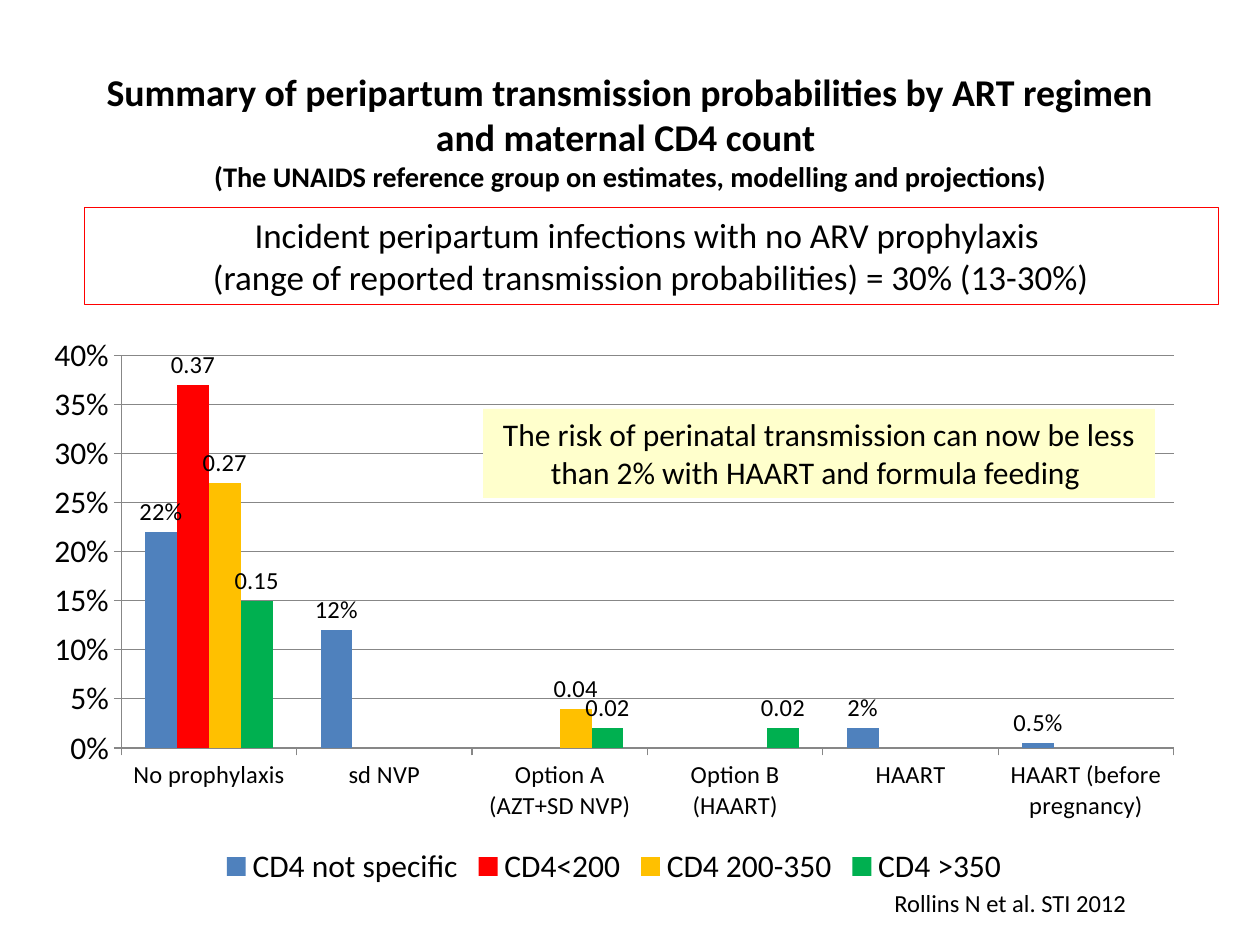
from pptx import Presentation
from pptx.chart.data import CategoryChartData
from pptx.dml.color import RGBColor
from pptx.enum.chart import XL_CHART_TYPE, XL_LABEL_POSITION, XL_LEGEND_POSITION, XL_TICK_MARK
from pptx.enum.shapes import MSO_SHAPE
from pptx.enum.text import MSO_ANCHOR, MSO_AUTO_SIZE, PP_ALIGN
from pptx.util import Pt

BLACK = RGBColor(0x00, 0x00, 0x00)
GREY = RGBColor(0x87, 0x87, 0x87)
BLUE = RGBColor(0x4F, 0x81, 0xBD)
RED = RGBColor(0xFF, 0x00, 0x00)
AMBER = RGBColor(0xFF, 0xC0, 0x00)
GREEN = RGBColor(0x00, 0xB0, 0x50)
CREAM = RGBColor(0xFF, 0xFF, 0xCC)

EMU_PER_PX = 914400 / 126

REGIMENS = ["No prophylaxis", "sd NVP", "Option A (AZT+SD NVP)",
            "Option B (HAART)", "HAART", "HAART (before pregnancy)"]
CD4_GROUPS = [
    ("CD4 not specific", BLUE, "0%", [0.22, 0.12, None, None, 0.02, 0.005]),
    ("CD4<200", RED, "General", [0.37, None, None, None, None, None]),
    ("CD4 200-350", AMBER, "General", [0.27, None, 0.04, None, None, None]),
    ("CD4 >350", GREEN, "General", [0.15, None, 0.02, 0.02, None, None]),
]


def px(*lengths):
    return [round(length * EMU_PER_PX) for length in lengths]


def apply(target, **values):
    for name, value in values.items():
        setattr(target, name, value)


class SlideBuilder:
    font_name = "Calibri"

    def __init__(self, deck):
        self.slide = deck.slides.add_slide(deck.slide_layouts[5])

    def style(self, font, size, bold=False):
        apply(font, name=self.font_name, size=Pt(size), bold=bold)
        font.color.rgb = BLACK

    def set_lines(self, frame, lines, size, align=PP_ALIGN.CENTER):
        for index, line in enumerate(lines):
            paragraph = frame.paragraphs[0] if index == 0 else frame.add_paragraph()
            paragraph.alignment = align
            run = paragraph.add_run()
            run.text = line
            self.style(run.font, size)

    def title(self, box, parts):
        heading = self.slide.shapes.title
        apply(heading, **dict(zip(("left", "top", "width", "height"), px(*box))))
        apply(heading.text_frame, word_wrap=True, auto_size=MSO_AUTO_SIZE.NONE,
              vertical_anchor=MSO_ANCHOR.MIDDLE)
        paragraph = heading.text_frame.paragraphs[0]
        paragraph.alignment = PP_ALIGN.CENTER
        for index, (words, size) in enumerate(parts):
            if index:
                paragraph.add_line_break()
            run = paragraph.add_run()
            run.text = words
            self.style(run.font, size, bold=True)

    def panel(self, box, lines, size, fill=None, line=None):
        panel = self.slide.shapes.add_shape(MSO_SHAPE.RECTANGLE, *px(*box))
        panel.shadow.inherit = False
        if fill is None:
            panel.fill.background()
        else:
            panel.fill.solid()
            panel.fill.fore_color.rgb = fill
        if line is None:
            panel.line.fill.background()
        else:
            panel.line.color.rgb = line
            panel.line.width = Pt(0.25)
        apply(panel.text_frame, word_wrap=True, vertical_anchor=MSO_ANCHOR.TOP,
              auto_size=MSO_AUTO_SIZE.SHAPE_TO_FIT_TEXT)
        self.set_lines(panel.text_frame, lines, size)

    def note(self, box, words, size):
        note = self.slide.shapes.add_textbox(*px(*box))
        apply(note.text_frame, word_wrap=False, auto_size=MSO_AUTO_SIZE.SHAPE_TO_FIT_TEXT)
        self.set_lines(note.text_frame, [words], size, PP_ALIGN.LEFT)

    def column_chart(self, box, categories, groups):
        figures = CategoryChartData()
        figures.categories = categories
        for name, _, number_format, values in groups:
            figures.add_series(name, values, number_format)
        chart = self.slide.shapes.add_chart(
            XL_CHART_TYPE.COLUMN_CLUSTERED, *px(*box), figures).chart
        self.style(chart.font, 18)
        apply(chart, has_title=False, has_legend=True)
        apply(chart.legend, position=XL_LEGEND_POSITION.BOTTOM, include_in_layout=False)
        apply(chart.value_axis, minimum_scale=0, maximum_scale=0.4, major_unit=0.05,
              has_major_gridlines=True)
        apply(chart.value_axis.tick_labels, number_format="0%",
              number_format_is_linked=False)
        self.style(chart.category_axis.tick_labels.font, 14)
        for axis in (chart.value_axis, chart.category_axis):
            axis.major_tick_mark = XL_TICK_MARK.OUTSIDE
            axis.format.line.color.rgb = GREY
        chart.value_axis.major_gridlines.format.line.color.rgb = GREY
        plot = chart.plots[0]
        apply(plot, gap_width=150, overlap=0, vary_by_categories=False)
        for series, (_, color, number_format, _) in zip(plot.series, groups):
            series.format.fill.solid()
            series.format.fill.fore_color.rgb = color
            apply(series.data_labels, show_value=True, number_format=number_format,
                  number_format_is_linked=False, position=XL_LABEL_POSITION.OUTSIDE_END)
            self.style(series.data_labels.font, 14)
        return plot

    def point_label(self, series, index, words):
        label = series.points[index].data_label
        self.set_lines(label.text_frame, [words], 14)
        label.position = XL_LABEL_POSITION.OUTSIDE_END


def main():
    deck = Presentation()
    apply(deck, **dict(zip(("slide_width", "slide_height"), px(1260, 945))))
    page = SlideBuilder(deck)
    page.title((63, 63, 1134, 136), [
        ("Summary of peripartum transmission probabilities by ART regimen "
         "and maternal CD4 count ", 21.6),
        ("(The UNAIDS reference group on estimates, modelling and projections)", 16.2),
    ])
    transmission = page.column_chart((31, 325, 1166, 567), REGIMENS, CD4_GROUPS)
    page.point_label(transmission.series[0], 5, "0.5%")
    page.note((882, 882, 291, 43), "Rollins N et al. STI 2012", 14)
    page.panel((84, 207, 1134, 97), [
        "Incident peripartum infections with no ARV prophylaxis ",
        "(range of reported transmission probabilities) = 30% (13-30%)",
    ], 20, line=RED)
    page.panel((483, 409, 672, 89), [
        "The risk of perinatal transmission can now be less than 2% "
        "with HAART and formula feeding ",
    ], 18, fill=CREAM)
    deck.save("out.pptx")


if __name__ == "__main__":
    main()
